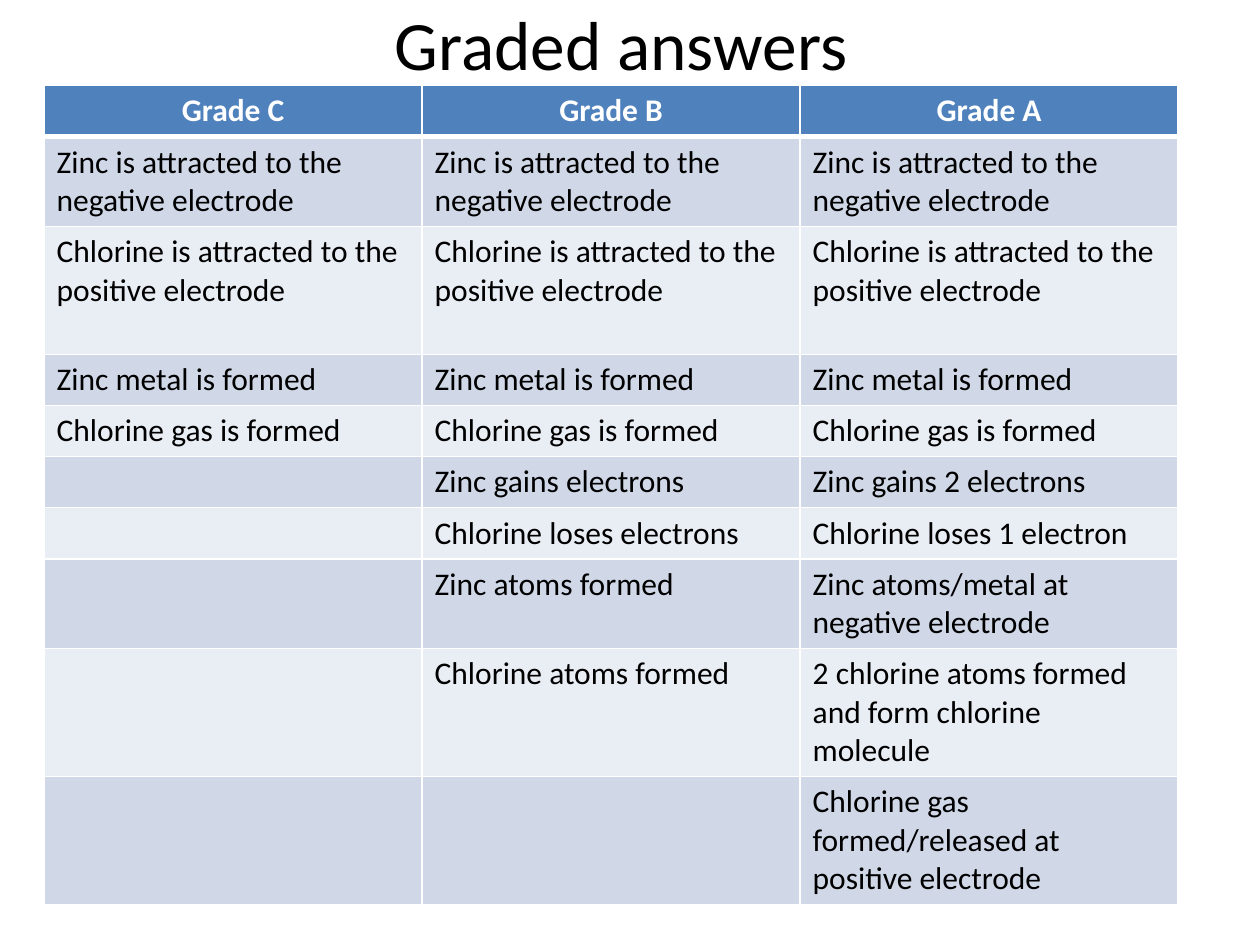
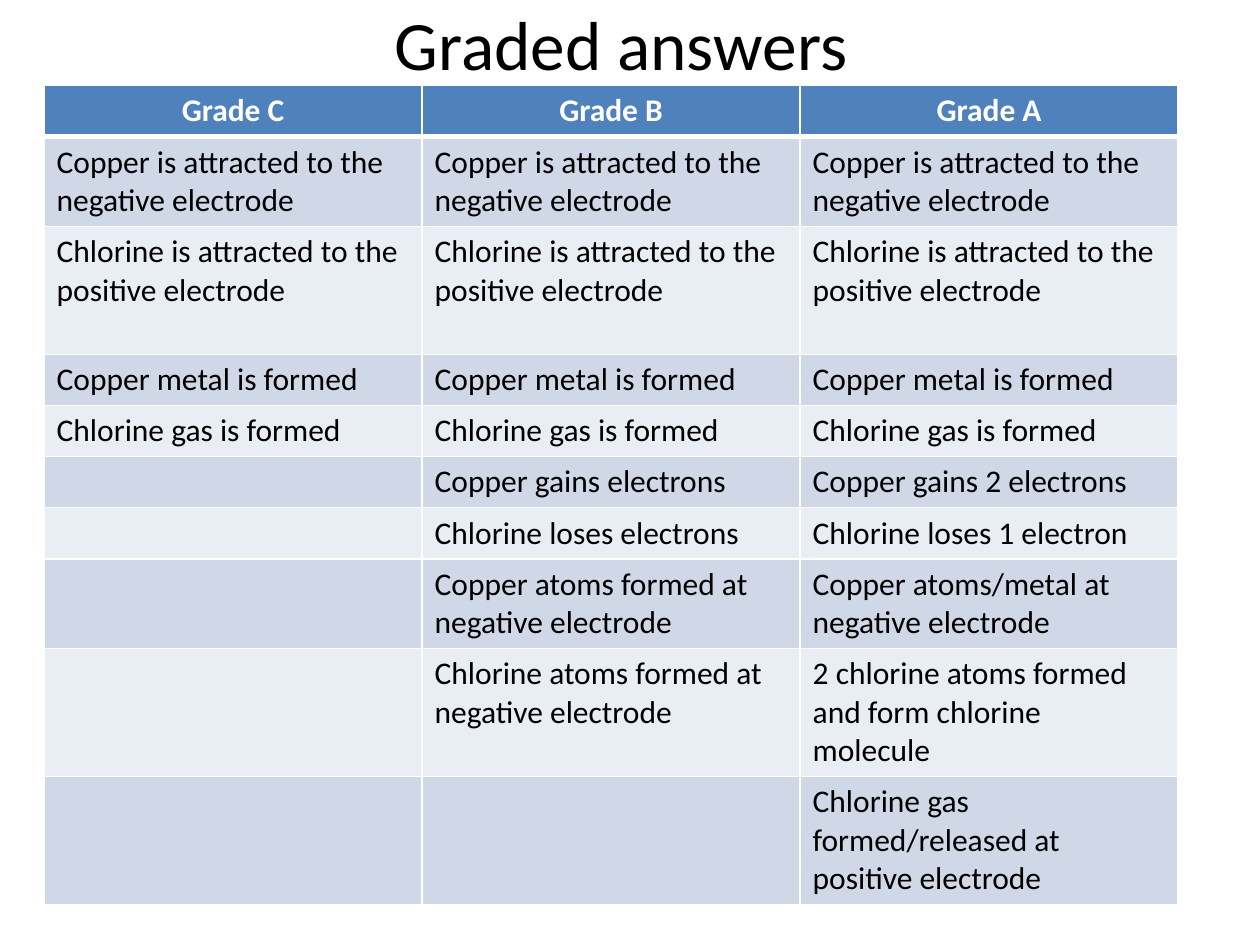
from lxml import etree
from pptx import Presentation
from pptx.dml.color import RGBColor
from pptx.enum import text
from pptx.oxml.ns import qn
from pptx.util import Inches, Pt

# Content: one table of graded answers per metal
TITLE = "Graded answers"
GRADES = ("Grade C", "Grade B", "Grade A")
METAL_ANSWERS = [
    ("Zinc", "Zinc atoms formed", "Chlorine atoms formed"),
    ("Copper", "Copper atoms formed at negative electrode",
     "Chlorine atoms formed at negative electrode"),
]


def answer_rows(metal, metal_atoms, chlorine_atoms):
    """Rows from the shared answers to the ones only grade A gives."""
    shared = [
        f"{metal} is attracted to the negative electrode",
        "Chlorine is attracted to the positive electrode",
        f"{metal} metal is formed",
        "Chlorine gas is formed",
    ]
    return [(answer,) * 3 for answer in shared] + [
        ("", f"{metal} gains electrons", f"{metal} gains 2 electrons"),
        ("", "Chlorine loses electrons", "Chlorine loses 1 electron"),
        ("", metal_atoms, f"{metal} atoms/metal at negative electrode"),
        ("", chlorine_atoms, "2 chlorine atoms formed and form chlorine molecule"),
        ("", "", "Chlorine gas formed/released at positive electrode"),
    ]


# Shared style
FONT = "Calibri"
WHITE, BLACK = "FFFFFF", "000000"
HEADER_FILL = "4F81BD"
BAND_FILLS = ("D0D8E8", "E9EDF4")
THIN, THICK = 1, 3
COLUMN_WIDTH = Inches(3)
ROW_LINES = (1, 2, 3, 1, 1, 1, 1, 2, 3, 3)
LINE_HEIGHT, ROW_PADDING = Pt(22), Inches(0.1)


def color(hex_string):
    return RGBColor.from_string(hex_string)


def write(frame, content, size=18, ink=BLACK, bold=False, align=text.PP_ALIGN.LEFT):
    paragraph = frame.paragraphs[0]
    paragraph.alignment = align
    if content:
        run = paragraph.add_run()
        run.text = content
        run.font.name, run.font.size = FONT, Pt(size)
        run.font.bold = bold
        run.font.color.rgb = color(ink)


def set_borders(cell, top, bottom):
    properties = cell._tc.get_or_add_tcPr()
    for side, width in (("L", THIN), ("R", THIN), ("T", top), ("B", bottom)):
        line = etree.SubElement(properties, qn(f"a:ln{side}"), w=str(Pt(width)))
        fill = etree.SubElement(line, qn("a:solidFill"))
        etree.SubElement(fill, qn("a:srgbClr"), val=WHITE)


def add_title(slide):
    box = slide.shapes.add_textbox(Inches(0.43), 0, Inches(9), Inches(0.68))
    frame = box.text_frame
    frame.word_wrap = True
    frame.vertical_anchor = text.MSO_ANCHOR.MIDDLE
    write(frame, TITLE, size=39.6, align=text.PP_ALIGN.CENTER)


def add_answer_table(slide, rows):
    heights = [ROW_PADDING + lines * LINE_HEIGHT for lines in ROW_LINES]
    table = slide.shapes.add_table(
        len(rows), len(GRADES), Inches(0.35), Inches(0.68),
        COLUMN_WIDTH * len(GRADES), sum(heights)).table
    for column in table.columns:
        column.width = COLUMN_WIDTH
    for index, (row, answers) in enumerate(zip(table.rows, rows)):
        row.height = heights[index]
        header = index == 0
        for cell, answer in zip(row.cells, answers):
            # The heavy rule lies between the header and the first answer
            set_borders(cell, top=THICK if index == 1 else THIN,
                        bottom=THICK if header else THIN)
            cell.fill.solid()
            cell.fill.fore_color.rgb = color(
                HEADER_FILL if header else BAND_FILLS[(index - 1) % 2])
            write(cell.text_frame, answer, bold=header,
                  ink=WHITE if header else BLACK,
                  align=text.PP_ALIGN.CENTER if header else text.PP_ALIGN.LEFT)


def main():
    presentation = Presentation()
    presentation.slide_width, presentation.slide_height = Inches(10), Inches(7.5)
    for answers in METAL_ANSWERS:
        slide = presentation.slides.add_slide(presentation.slide_layouts[6])
        add_title(slide)
        add_answer_table(slide, [GRADES] + answer_rows(*answers))
    presentation.save("out.pptx")


if __name__ == "__main__":
    main()
